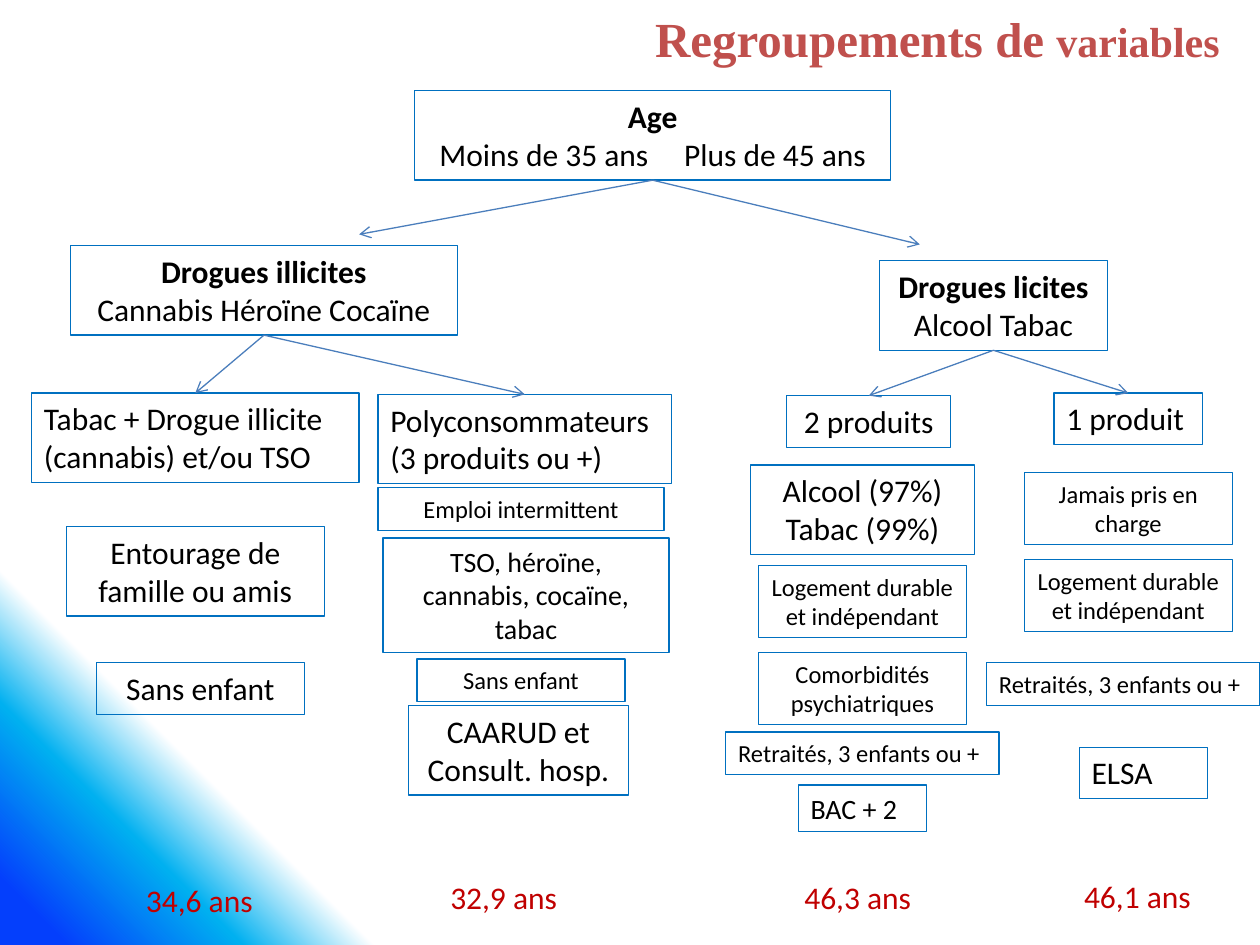
from lxml.etree import SubElement
from pptx import Presentation
from pptx.dml.color import RGBColor
from pptx.enum.shapes import MSO_CONNECTOR, MSO_SHAPE
from pptx.enum.text import MSO_ANCHOR, MSO_AUTO_SIZE, PP_ALIGN
from pptx.oxml import parse_xml
from pptx.oxml.ns import qn
from pptx.util import Inches, Pt

WIDTH, HEIGHT = 10, 7.5
TOP, BOTTOM = 0, 2
LEFT, CENTER, RIGHT = PP_ALIGN.LEFT, PP_ALIGN.CENTER, PP_ALIGN.RIGHT
BORDER, ARROW, TITLE, AGE = "0070C0", "4B7EBC", "C0504D", "C00000"
LINE_HEIGHT, PADDING = 1.22, 0.1
WIDE_GAP = 1630

COLUMNS = [
    ((0.25, 3.12, 2.6, 4.23), [
        ("Tabac + Drogue illicite (cannabis) et/ou TSO", 0, 0, 2.6, 2, 18, LEFT),
        ("Entourage de famille ou amis", 0, 1.06, 2.05, 2, 18, CENTER),
        ("Sans enfant", 0.04, 2.14, 1.65, 1, 18, CENTER),
    ], ("34,6 ans", 0.1)),
    ((3, 3.13, 2.33, 4.2), [
        ("Polyconsommateurs (3 produits ou +)", 0, 0, 2.33, 2, 18, LEFT),
        ("Emploi intermittent", -0.03, 0.74, 2.27, 1, 14, CENTER),
        ("TSO, héroïne, cannabis, cocaïne, tabac", 0.01, 1.14, 2.27, 3, 16, CENTER),
        ("Sans enfant", -0.03, 2.1, 1.65, 1, 14, CENTER),
        ("CAARUD et Consult. hosp.", -0.05, 2.47, 1.75, 2, 18, CENTER),
    ], ("32,9 ans", -0.1)),
    ((5.76, 3.14, 2.17, 4.19), [
        ("2 produits", 0.05, 0, 1.3, 1, 18, CENTER),
        ("Alcool (97%)\nTabac (99%)", 0, 0.55, 1.78, 2, 18, CENTER),
        ("Logement durable et indépendant", 0, 1.35, 1.65, 2, 14, CENTER),
        ("Comorbidités psychiatriques", 0, 2.04, 1.65, 2, 14, CENTER),
        ("Retraités, 3 enfants ou +", 0, 2.67, 2.17, 1, 14, LEFT),
        ("BAC + 2", 0, 3.09, 1.02, 1, 16, LEFT),
    ], ("46,3 ans", 0.03)),
    ((7.83, 3.12, 2.17, 4.2), [
        ("1 produit", 0.04, 0, 1.18, 1, 18, LEFT),
        ("Jamais pris en charge", 0.04, 0.63, 1.65, 2, 14, CENTER),
        ("Logement durable et indépendant", 0.04, 1.32, 1.65, 2, 14, CENTER),
        ("Retraités, 3 enfants ou +", 0, 2.14, 2.17, 1, 14, LEFT),
        ("ELSA", 0.16, 2.81, 1.02, 1, 18, LEFT),
    ], ("46,1 ans", 0.18)),
]


def color(value):
    return RGBColor.from_string(value)


def inches(*lengths):
    return [Inches(length) for length in lengths]


def write(paragraph, text, size=18, font="Calibri", ink="000000", bold=False,
          align=None, spacing=None):
    if align is not None:
        paragraph.alignment = align
    run = paragraph.add_run()
    run.text = text
    run.font.size, run.font.name, run.font.bold = Pt(size), font, bold
    run.font.color.rgb = color(ink)
    if spacing:
        run.font._element.set("spc", str(spacing))


def height_of(lines, size):
    return round(lines * size * LINE_HEIGHT / 72 + PADDING, 2)


def add_box(slide, left, top, width, lines, size=18):
    box = slide.shapes.add_shape(
        MSO_SHAPE.RECTANGLE, *inches(left, top, width, height_of(lines, size)))
    box.shadow.inherit = False
    box.fill.background()
    box.line.color.rgb = color(BORDER)
    box.line.width = Pt(0.75)
    frame = box.text_frame
    frame.word_wrap = True
    frame.auto_size = MSO_AUTO_SIZE.SHAPE_TO_FIT_TEXT
    frame.vertical_anchor = MSO_ANCHOR.TOP
    return box


def add_arrow(slide, parent, child=None, end=(0, 0)):
    arrow = slide.shapes.add_connector(MSO_CONNECTOR.STRAIGHT, 0, 0, *inches(*end))
    arrow.begin_connect(parent, BOTTOM)
    if child is not None:
        arrow.end_connect(child, TOP)
    arrow.line.color.rgb = color(ARROW)
    arrow.line.width = Pt(0.75)
    SubElement(arrow.line._get_or_add_ln(), qn("a:tailEnd"), type="arrow")
    SubElement(arrow.element.spPr, qn("a:effectLst"))


def paint_background(slide):
    slide.background.fill.gradient()
    gradient = next(slide.element.iter(qn("a:gradFill")))
    stops = [(5, "FFFFFF"), (83, "FFFFFF"), (89, "00B0F0"), (97, "043FFC")]
    marks = "".join(
        f'<a:gs pos="{share * 1000}"><a:srgbClr val="{ink}"/></a:gs>'
        for share, ink in stops)
    gradient.getparent().replace(gradient, parse_xml(
        '<a:gradFill xmlns:a="http://schemas.openxmlformats.org/drawingml/2006/main"'
        f' rotWithShape="1"><a:gsLst>{marks}</a:gsLst><a:path path="circle">'
        '<a:fillToRect l="100000" b="100000"/></a:path></a:gradFill>'))


def add_title(slide, box):
    title = slide.shapes.title
    title.left, title.top, title.width, title.height = inches(*box)
    frame = title.text_frame
    frame.auto_size = MSO_AUTO_SIZE.NONE
    frame.vertical_anchor = MSO_ANCHOR.MIDDLE
    heading = frame.paragraphs[0]
    for text, size in (("Regroupements de ", 28), ("variables", 24)):
        write(heading, text, size=size, font="Times New Roman", ink=TITLE,
              bold=True, align=RIGHT)


def add_group(slide, left, top, width, heading, parts):
    group = add_box(slide, left, top, width, 2)
    frame = group.text_frame
    write(frame.paragraphs[0], heading, bold=True, align=CENTER)
    detail = frame.add_paragraph()
    for index, part in enumerate(parts):
        if index:
            write(detail, " ", spacing=WIDE_GAP)
        write(detail, part, align=CENTER)
    return group


def add_column(slide, box, profile, mean_age):
    left, top, width, height = box
    middle = left + width / 2
    cards = []
    for text, shift, drop, card_width, lines, size, align in profile:
        card = add_box(slide, middle + shift - card_width / 2, top + drop,
                       card_width, lines, size)
        for index, line in enumerate(text.split("\n")):
            frame = card.text_frame
            paragraph = frame.add_paragraph() if index else frame.paragraphs[0]
            write(paragraph, line, size=size, align=align)
        cards.append(card)
    text, shift = mean_age
    age_width, age_height = 1.18, height_of(1, 18)
    age = slide.shapes.add_textbox(*inches(
        middle + shift - age_width / 2, top + height - age_height,
        age_width, age_height))
    age.text_frame.word_wrap = True
    age.text_frame.auto_size = MSO_AUTO_SIZE.SHAPE_TO_FIT_TEXT
    write(age.text_frame.paragraphs[0], text, ink=AGE)
    return cards[0]


def main():
    deck = Presentation()
    deck.slide_width, deck.slide_height = inches(WIDTH, HEIGHT)
    slide = deck.slides.add_slide(deck.slide_layouts[5])
    paint_background(slide)
    add_title(slide, (0.84, 0.03, 8.94, 0.55))
    age = add_group(slide, 3.29, 0.72, 3.78, "Age",
                    ["Moins de 35 ans", "Plus de 45 ans"])
    illicit = add_group(slide, 0.56, 1.95, 3.07, "Drogues illicites",
                        ["Cannabis Héroïne Cocaïne"])
    licit = add_group(slide, 6.98, 2.07, 1.81, "Drogues licites", ["Alcool Tabac"])
    heads = [add_column(slide, *column) for column in COLUMNS]
    for end in ((2.85, 1.86), (7.3, 1.94)):
        add_arrow(slide, age, end=end)
    for parent, head in zip((illicit, illicit, licit, licit), heads):
        add_arrow(slide, parent, head)
    deck.save("out.pptx")


if __name__ == "__main__":
    main()
